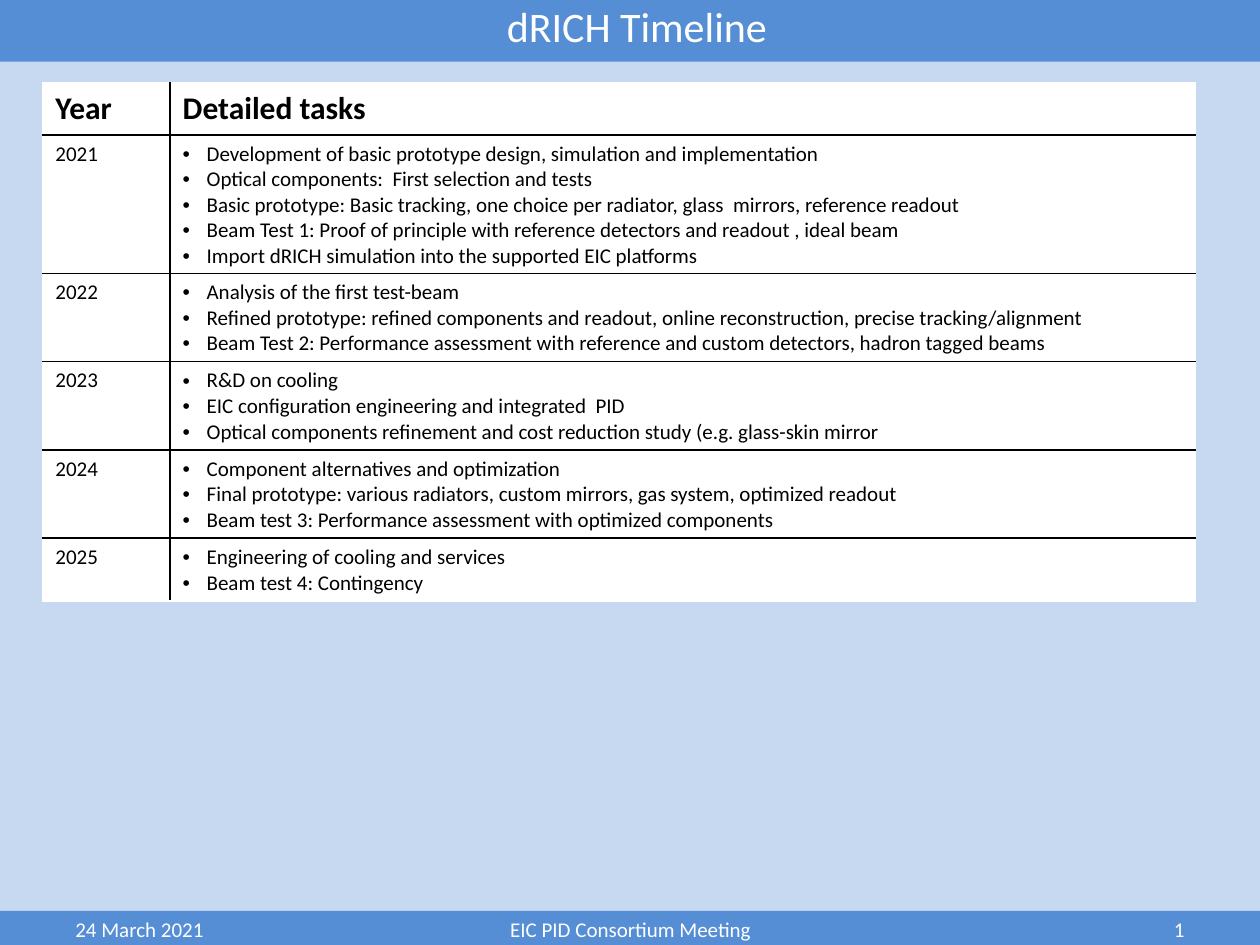
"""Build the dRICH timeline slide: a table of yearly tasks between two bars."""
from lxml import etree
from pptx import Presentation
from pptx.dml.color import RGBColor
from pptx.enum import shapes, text
from pptx.oxml import ns
from pptx.util import Inches, Pt

TITLE = "dRICH Timeline"
HEADINGS = ("Year", "Detailed tasks")
TASKS = {
    "2021": [
        "Development of basic prototype design, simulation and implementation",
        "Optical components:  First selection and tests",
        "Basic prototype: Basic tracking, one choice per radiator, glass  mirrors, reference readout",
        "Beam Test 1: Proof of principle with reference detectors and readout , ideal beam",
        "Import dRICH simulation into the supported EIC platforms",
    ],
    "2022": [
        "Analysis of the first test-beam",
        "Refined prototype: refined components and readout, online reconstruction, precise tracking/alignment",
        "Beam Test 2: Performance assessment with reference and custom detectors, hadron tagged beams",
    ],
    "2023": [
        "R&D on cooling",
        "EIC configuration engineering and integrated  PID",
        "Optical components refinement and cost reduction study (e.g. glass-skin mirror",
    ],
    "2024": [
        "Component alternatives and optimization",
        "Final prototype: various radiators, custom mirrors, gas system, optimized readout",
        "Beam test 3: Performance assessment with optimized components",
    ],
    "2025": ["Engineering of cooling and services", "Beam test 4: Contingency"],
}
FOOTERS = [
    ("24 March 2021", 0.5, 2.33, text.PP_ALIGN.LEFT),
    ("EIC PID Consortium Meeting", 3.42, 3.17, text.PP_ALIGN.CENTER),
    ("1", 7.17, 2.33, text.PP_ALIGN.RIGHT),
]
COLORS = {"background": "C6D9F1", "bar": "558ED5", "white": "FFFFFF", "black": "000000"}
FONT = "Calibri"
WIDTH, HEIGHT = 10, 7.5
TITLE_BAR, FOOTER_TOP, FOOTER_HEIGHT = 0.49, 7.23, 0.28
TABLE_LEFT, TABLE_TOP = 0.34, 0.66
COLUMNS = (1.01, 8.14)
HEADER_HEIGHT, LINE_HEIGHT, ROW_PADDING = 0.41, 0.2, 0.1
BULLET_INDENT = 0.19


def color(name):
    return RGBColor.from_string(COLORS[name])


def style(paragraph, size, color_name, bold=False, align=text.PP_ALIGN.LEFT):
    paragraph.alignment = align
    font = paragraph.font
    font.name, font.size, font.bold = FONT, Pt(size), bold
    font.color.rgb = color(color_name)


def add_bar(slide, top, height):
    bar = slide.shapes.add_shape(
        shapes.MSO_SHAPE.RECTANGLE, 0, Inches(top), Inches(WIDTH), Inches(height))
    bar.shadow.inherit = False
    bar.fill.solid()
    bar.fill.fore_color.rgb = color("bar")
    bar.line.fill.background()


def place_title(slide):
    title = slide.shapes.title
    title.left, title.top = Inches(3.91), Inches(-0.05)
    title.width, title.height = Inches(2.29), Inches(0.5)
    frame = title.text_frame
    frame.text = TITLE
    frame.word_wrap = False
    frame.vertical_anchor = text.MSO_ANCHOR.TOP
    style(frame.paragraphs[0], 24, "white", align=text.PP_ALIGN.CENTER)
    slide.shapes._spTree.append(title._element)


def add_footer(slide, label, left, width, align):
    box = slide.shapes.add_textbox(
        Inches(left), Inches(FOOTER_TOP), Inches(width), Inches(FOOTER_HEIGHT))
    frame = box.text_frame
    frame.text = label
    frame.word_wrap = True
    frame.vertical_anchor = text.MSO_ANCHOR.MIDDLE
    style(frame.paragraphs[0], 12, "white", align=align)


def add_bullet(paragraph):
    properties = paragraph._p.get_or_add_pPr()
    indent = Inches(BULLET_INDENT)
    properties.set("marL", str(indent))
    properties.set("indent", str(-indent))
    bullet_font = etree.Element(ns.qn("a:buFont"), typeface="Arial")
    bullet = etree.Element(ns.qn("a:buChar"), char="•")
    properties.insert_element_before(bullet_font, "a:tabLst", "a:defRPr", "a:extLst")
    properties.insert_element_before(bullet, "a:tabLst", "a:defRPr", "a:extLst")


def set_borders(cell, outer_sides):
    properties = cell._tc.get_or_add_tcPr()
    for position, side in enumerate("LRTB"):
        line = etree.Element(ns.qn(f"a:ln{side}"), w=str(Pt(1)))
        fill = etree.SubElement(line, ns.qn("a:solidFill"))
        shade = COLORS["white" if side in outer_sides else "black"]
        etree.SubElement(fill, ns.qn("a:srgbClr"), val=shade)
        properties.insert(position, line)


def add_timeline(slide):
    rows = [([HEADINGS[0]], [HEADINGS[1]])]
    rows += [([year], tasks) for year, tasks in TASKS.items()]
    heights = [HEADER_HEIGHT]
    heights += [ROW_PADDING + LINE_HEIGHT * len(tasks) for tasks in TASKS.values()]
    table = slide.shapes.add_table(
        len(rows), len(COLUMNS), Inches(TABLE_LEFT), Inches(TABLE_TOP),
        Inches(sum(COLUMNS)), Inches(sum(heights))).table
    table.horz_banding = False
    for column, width in zip(table.columns, COLUMNS):
        column.width = Inches(width)
    for row_index, (row, height) in enumerate(zip(rows, heights)):
        table.rows[row_index].height = Inches(height)
        header = row_index == 0
        for column_index, lines in enumerate(row):
            cell = table.cell(row_index, column_index)
            cell.fill.solid()
            cell.fill.fore_color.rgb = color("white")
            cell.text = "\n".join(lines)
            for paragraph in cell.text_frame.paragraphs:
                style(paragraph, 18 if header else 12, "black", bold=header)
                if column_index and not header:
                    add_bullet(paragraph)
            outer_sides = "LR"[column_index]
            outer_sides += "T" if header else ""
            outer_sides += "B" if row_index == len(rows) - 1 else ""
            set_borders(cell, outer_sides)


def main():
    presentation = Presentation()
    presentation.slide_width, presentation.slide_height = Inches(WIDTH), Inches(HEIGHT)
    slide = presentation.slides.add_slide(presentation.slide_layouts.get_by_name("Title Only"))
    slide.background.fill.solid()
    slide.background.fill.fore_color.rgb = color("background")
    add_bar(slide, 0, TITLE_BAR)
    place_title(slide)
    add_bar(slide, FOOTER_TOP, FOOTER_HEIGHT)
    for footer in FOOTERS:
        add_footer(slide, *footer)
    add_timeline(slide)
    presentation.save("out.pptx")


if __name__ == "__main__":
    main()
